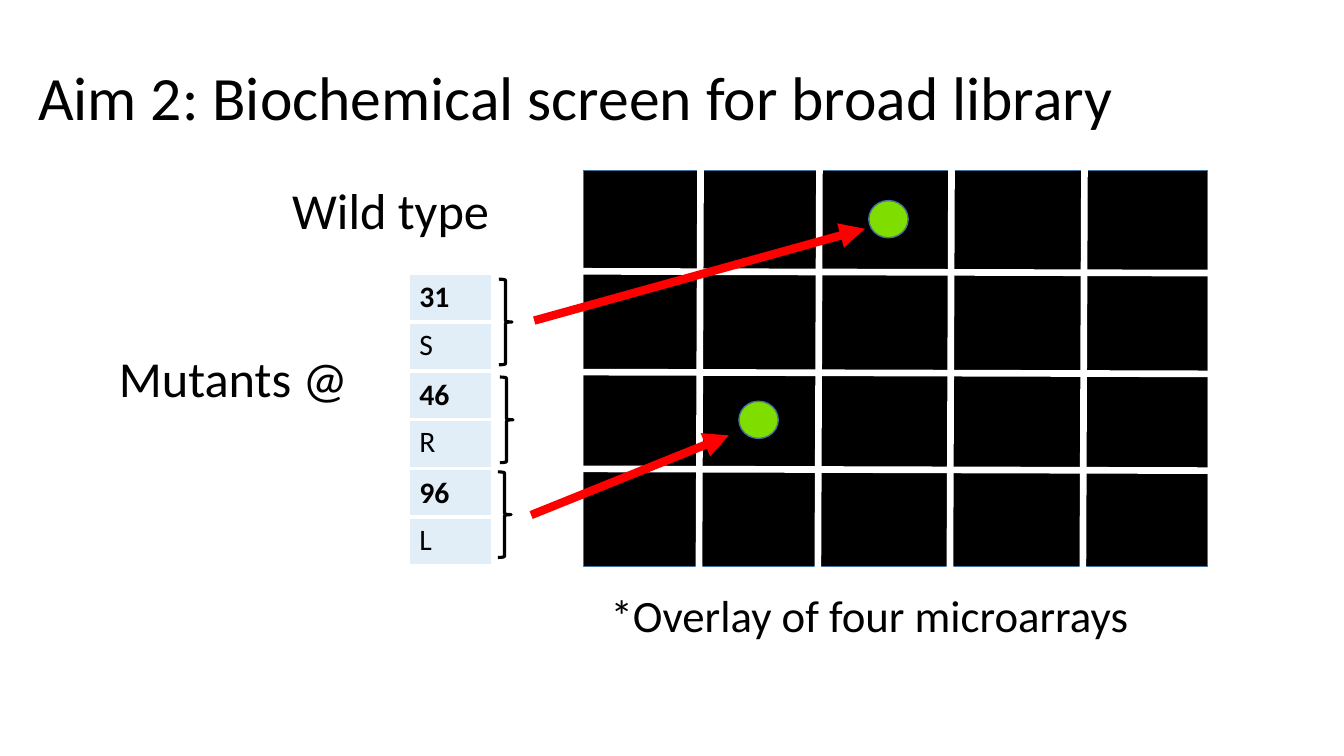
from lxml import etree
from pptx import Presentation
from pptx import util as u
from pptx.dml.color import RGBColor
from pptx.enum import shapes, text
from pptx.oxml import ns

Pt = u.Pt
FONT = "Calibri"
BLACK, WHITE, RED = "000000", "FFFFFF", "FF0000"
GREEN, OUTLINE, CELL = "7FDE00", "43739E", "E1EDF7"

# Wording, left, top, width, height, size
TITLE = ("Aim 2: Biochemical screen for broad library", 20.2, 19.4, 828, 104.4, 44)
LABELS = [
    ("Mutants @", 77.8, 244.1, 181.4, 51.1, 36),
    ("Wild type", 201.6, 124.6, 212.4, 51.1, 36),
    ("*Overlay of four microarrays", 429.1, 416.2, 499, 46.1, 32),
]

# Residue number, mutation, table top, brace left, brace top
MUTANTS = [
    ("31", "S", 195.8, 356.4, 199.4),
    ("46", "R", 265.7, 357.1, 269.3),
    ("96", "L", 335.5, 355.7, 337),
]
TABLE_LEFT, TABLE_WIDTH, ROW_HEIGHT, CELL_SIZE = 292.3, 59, 34, 21.2
BRACE_WIDTH, BRACE_HEIGHT = 9.4, 61.2

ARRAY = (416.9, 121.7, 445.7, 283)
HITS = [(620.6, 143.3), (527.8, 286.6)]
HIT_WIDTH, HIT_HEIGHT = 28.1, 26.6

# The grid lines lean slightly
SLANT = 1.3
COLUMN_LINES = [(500.4, 120.2), (585.4, 103.7), (679.7, 109.4), (774.7, 103.7)]
COLUMN_LENGTH = 332
ROW_LINES = [(871.9, 195.1), (875.5, 267.1), (875.5, 336.2)]
ROW_LENGTH = 460.8
ARROWS = [(381.6, 229, 617.8, 163.4), (379.4, 367.9, 520.6, 311)]


def color(value):
    return RGBColor.from_string(value)


def points(*values):
    return [Pt(value) for value in values]


def format_text(paragraph, size, bold=False):
    for run in paragraph.runs:
        run.font.name = FONT
        run.font.size = Pt(size)
        run.font.bold = bold
        run.font.color.rgb = color(BLACK)


def add_label(slide, wording, left, top, width, height, size):
    box = slide.shapes.add_textbox(*points(left, top, width, height))
    frame = box.text_frame
    frame.word_wrap = True
    frame.text = wording
    format_text(frame.paragraphs[0], size)
    return frame


def add_shape(slide, kind, box, fill, line, weight):
    shape = slide.shapes.add_shape(kind, *points(*box))
    shape.shadow.inherit = False
    if fill:
        shape.fill.solid()
        shape.fill.fore_color.rgb = color(fill)
    else:
        shape.fill.background()
    shape.line.color.rgb = color(line)
    shape.line.width = Pt(weight)


def add_line(slide, ends, line_color, weight, arrow=False):
    line = slide.shapes.add_connector(shapes.MSO_CONNECTOR.STRAIGHT, *points(*ends))
    line.line.color.rgb = color(line_color)
    line.line.width = Pt(weight)
    properties = line._element.spPr
    if arrow:
        outline = line.line._get_or_add_ln()
        etree.SubElement(outline, ns.qn("a:tailEnd"), type="triangle")
    etree.SubElement(properties, ns.qn("a:effectLst"))


def set_borders(cell, weights):
    """Draw white borders; weights maps the sides L, R, T, B to points."""
    properties = cell._tc.get_or_add_tcPr()
    for index, side in enumerate("LRTB"):
        border = etree.Element(ns.qn(f"a:ln{side}"), w=str(Pt(weights[side])))
        fill = etree.SubElement(border, ns.qn("a:solidFill"))
        etree.SubElement(fill, ns.qn("a:srgbClr"), val=WHITE)
        properties.insert(index, border)


def add_mutant_table(slide, number, mutation, top):
    box = points(TABLE_LEFT, top, TABLE_WIDTH, 2 * ROW_HEIGHT)
    table = slide.shapes.add_table(2, 1, *box).table
    for row, wording in enumerate((number, mutation)):
        table.rows[row].height = Pt(ROW_HEIGHT)
        cell = table.cell(row, 0)
        cell.text_frame.text = wording
        format_text(cell.text_frame.paragraphs[0], CELL_SIZE, bold=row == 0)
        cell.fill.solid()
        cell.fill.fore_color.rgb = color(CELL)
        middle = {"B": 3} if row == 0 else {"T": 3}
        set_borders(cell, {"L": 1, "R": 1, "T": 1, "B": 1, **middle})


def main():
    presentation = Presentation()
    presentation.slide_width, presentation.slide_height = points(960, 540)
    slide = presentation.slides.add_slide(presentation.slide_layouts[6])

    title = add_label(slide, *TITLE)
    title.vertical_anchor = text.MSO_ANCHOR.MIDDLE
    title.paragraphs[0].line_spacing = 0.9

    kinds = shapes.MSO_SHAPE
    add_shape(slide, kinds.RECTANGLE, ARRAY, BLACK, OUTLINE, 1)
    for left, top in HITS:
        add_shape(slide, kinds.OVAL, (left, top, HIT_WIDTH, HIT_HEIGHT), GREEN, OUTLINE, 1)

    for number, mutation, top, brace_left, brace_top in MUTANTS:
        add_mutant_table(slide, number, mutation, top)
        brace = (brace_left, brace_top, BRACE_WIDTH, BRACE_HEIGHT)
        add_shape(slide, kinds.RIGHT_BRACE, brace, None, BLACK, 2.25)

    for x, y in COLUMN_LINES:
        add_line(slide, (x, y, x - SLANT, y + COLUMN_LENGTH), WHITE, 4.75)
    for x, y in ROW_LINES:
        add_line(slide, (x, y, x - ROW_LENGTH, y - SLANT), WHITE, 4.75)
    for ends in ARROWS:
        add_line(slide, ends, RED, 6, arrow=True)

    for label in LABELS:
        add_label(slide, *label)

    presentation.save("out.pptx")


if __name__ == "__main__":
    main()
